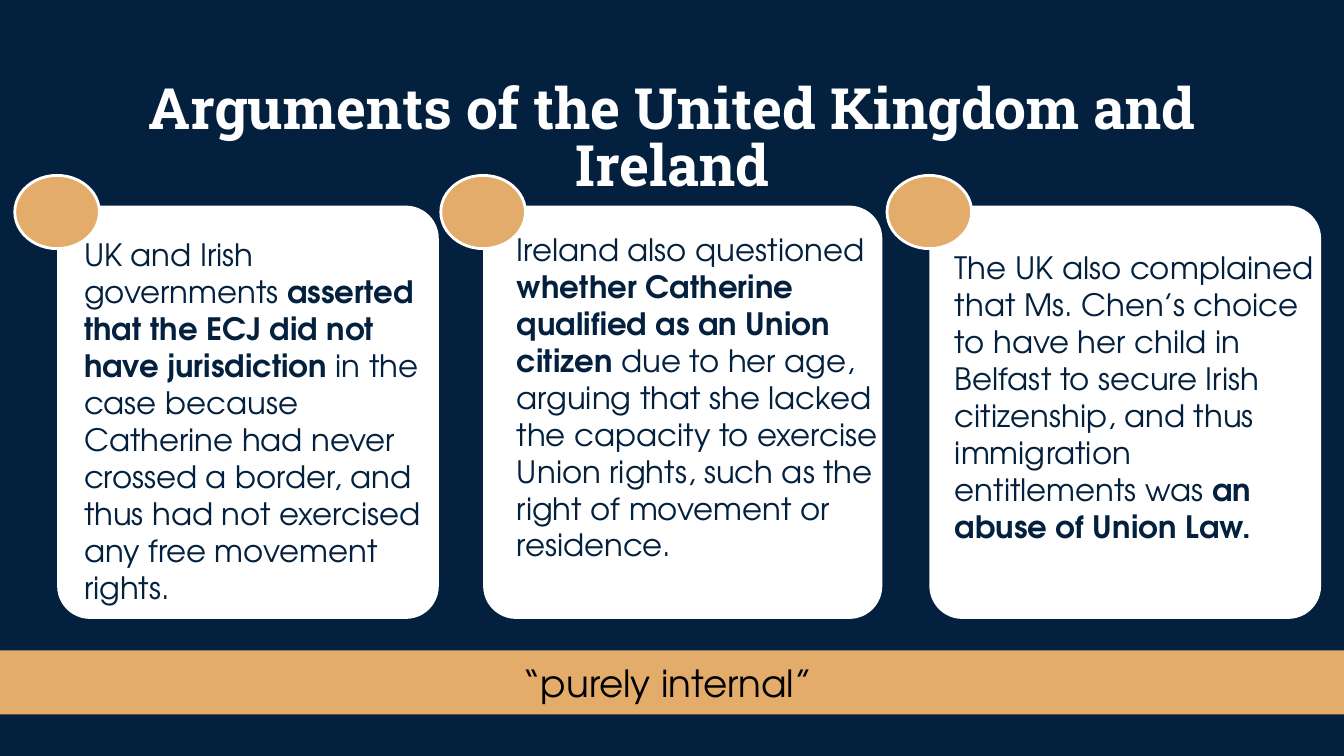
import pptx
import pptx.util
import pptx.dml.color
import pptx.enum.shapes
import pptx.enum.text

Inches = pptx.util.Inches
Pt = pptx.util.Pt
RGBColor = pptx.dml.color.RGBColor
SHAPE = pptx.enum.shapes.MSO_SHAPE
ALIGN = pptx.enum.text.PP_ALIGN

NAVY = RGBColor(0x03, 0x21, 0x3E)
SAND = RGBColor(0xE4, 0xAC, 0x6A)
WHITE = RGBColor(0xFF, 0xFF, 0xFF)
BLACK = RGBColor(0x00, 0x00, 0x00)

TITLE_FORMAT = {"name": "Roboto Slab", "size": Pt(61), "bold": True}
BODY_FORMAT = {"name": "TeX Gyre Adventor", "size": Pt(33), "bold": False}
BANNER_FORMAT = {"name": "TeX Gyre Adventor", "size": Pt(40), "bold": False}

CARD_TOP, CARD_HEIGHT, CARD_RADIUS = 3.06, 6.15, 0.49
DOT_TOP, DOT_WIDTH, DOT_HEIGHT = 2.61, 1.26, 1.09

# Each card: left and width, text area, then (text, bold) runs
ARGUMENTS = [
    (0.85, 5.68, (1.25, 3.51, 5.28, 5.41), [
        ("UK and Irish governments ", False),
        ("asserted that the ECJ did not have jurisdiction ", True),
        ("in the case because Catherine had never crossed a border, and thus "
         "had not exercised any free movement rights.", False)]),
    (7.19, 5.94, (7.69, 3.43, 5.37, 5.41), [
        ("Ireland also questioned ", False),
        ("whether Catherine qualified as an Union citizen ", True),
        ("due to her age, arguing that she lacked the capacity to exercise "
         "Union rights, such as the right of movement or residence.", False)]),
    (13.83, 5.83, (14.21, 3.7, 5.45, 4.32), [
        ("The UK also complained that Ms. Chen’s choice to have her child in "
         "Belfast to secure Irish citizenship, and thus immigration "
         "entitlements was ", False),
        ("an abuse of Union Law.", True)]),
]


def place(shape, area):
    shape.left, shape.top, shape.width, shape.height = map(Inches, area)


def add_panel(slide, kind, area, color):
    """Add a filled preset shape without outline or shadow."""
    panel = slide.shapes.add_shape(kind, *map(Inches, area))
    panel.shadow.inherit = False
    panel.fill.solid()
    panel.fill.fore_color.rgb = color
    panel.line.fill.background()
    return panel


def write_text(box, runs, font_format, color, spacing, alignment):
    """Fill a text shape with one paragraph of (text, bold) runs."""
    frame = box.text_frame
    frame_format = {
        "word_wrap": True,
        "auto_size": pptx.enum.text.MSO_AUTO_SIZE.NONE,
        "vertical_anchor": pptx.enum.text.MSO_ANCHOR.TOP,
        "margin_left": 0, "margin_top": 0,
        "margin_right": 0, "margin_bottom": 0,
    }
    for name, value in frame_format.items():
        setattr(frame, name, value)
    para = frame.paragraphs[0]
    para.alignment = alignment
    para.line_spacing = Pt(spacing)
    for text, bold in runs:
        span = para.add_run()
        span.text = text
        for name, value in {**font_format, "bold": bold}.items():
            setattr(span.font, name, value)
        span.font.color.rgb = color


def add_text(slide, area, *content):
    box = slide.shapes.add_textbox(*map(Inches, area))
    write_text(box, *content)


def add_title(slide, text):
    title = slide.shapes.title
    place(title, (0.92, 1.25, 18.16, 0.89))
    write_text(title, [(text, True)], TITLE_FORMAT, WHITE, 61, ALIGN.CENTER)


def add_card(slide, left, width, text_area, runs):
    """Add a rounded card, its text and the dot on its left edge."""
    card = add_panel(slide, SHAPE.ROUNDED_RECTANGLE,
                     (left, CARD_TOP, width, CARD_HEIGHT), WHITE)
    card.adjustments[0] = CARD_RADIUS / min(width, CARD_HEIGHT)
    add_text(slide, text_area, runs, BODY_FORMAT, NAVY, 39.6, ALIGN.LEFT)
    dot = add_panel(slide, SHAPE.OVAL,
                    (left - DOT_WIDTH / 2, DOT_TOP, DOT_WIDTH, DOT_HEIGHT), SAND)
    dot.line.color.rgb = WHITE
    dot.line.width = Pt(3)


def add_banner(slide, text):
    add_panel(slide, SHAPE.RECTANGLE, (-1.53, 9.68, 22.07, 0.95), SAND)
    add_text(slide, (7.69, 9.71, 4.48, 0.74), [(text, False)],
             BANNER_FORMAT, BLACK, 56, ALIGN.CENTER)


def main():
    deck = pptx.Presentation()
    deck.slide_width, deck.slide_height = Inches(20), Inches(11.25)
    page = deck.slides.add_slide(deck.slide_layouts.get_by_name("Title Only"))
    page.background.fill.solid()
    page.background.fill.fore_color.rgb = NAVY

    add_title(page, "Arguments of the United Kingdom and Ireland")
    for argument in ARGUMENTS:
        add_card(page, *argument)
    add_banner(page, "“purely internal”")
    deck.save("out.pptx")


if __name__ == "__main__":
    main()
